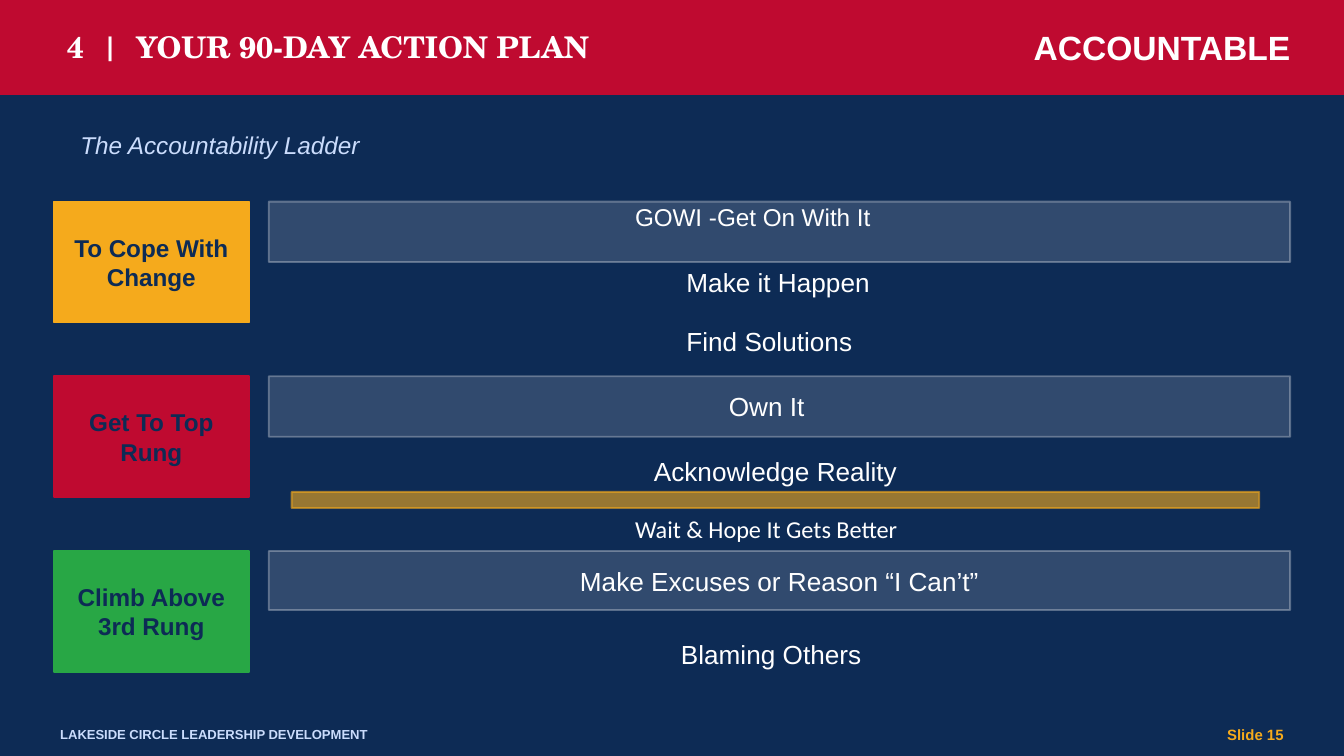
"""Build the accountability ladder slide."""
from lxml import etree
from pptx import Presentation
from pptx import util as u
from pptx.dml.color import RGBColor
from pptx.enum import shapes, text
from pptx.oxml import ns

NAVY = RGBColor(0x0D, 0x2B, 0x55)
RED = RGBColor(0xBF, 0x0A, 0x30)
GOLD = RGBColor(0xF5, 0xAA, 0x1C)
GREEN = RGBColor(0x28, 0xA7, 0x45)
PALE = RGBColor(0xCA, 0xDC, 0xFC)
WHITE = RGBColor(0xFF, 0xFF, 0xFF)
LEFT, MID, RIGHT = text.PP_ALIGN.LEFT, text.PP_ALIGN.CENTER, text.PP_ALIGN.RIGHT

deck = Presentation()
deck.slide_width = u.Inches(10)
deck.slide_height = deck.slide_width * 9 // 16
col = deck.slide_width / 10
row = deck.slide_height / 9 * 1.6
slide = deck.slides.add_slide(deck.slide_layouts[6])
slide.background.fill.solid()
slide.background.fill.fore_color.rgb = NAVY


def block(x, y, w, h, color, clear=100, edge=100):
    shape = slide.shapes.add_shape(
        shapes.MSO_SHAPE.RECTANGLE, int(x * col), int(y * row), int(w * col), int(h * row))
    shape.shadow.inherit = False
    shape.line.width = u.Pt(1)
    for fill, share in ((shape.fill, clear), (shape.line.fill, edge)):
        fill.solid()
        fill.fore_color.rgb = color
        if share < 100:
            tone = list(shape._element.spPr.iter(ns.qn("a:srgbClr")))[-1]
            etree.SubElement(tone, ns.qn("a:alpha"), val=str(share * 1000))
    return shape


def label(x, y, w, h, words, size, color=WHITE, align=MID, bold=False,
          italic=False, font="Arial", pad=0.05, grow=False, shape=None):
    if shape is None:
        shape = slide.shapes.add_textbox(int(x * col), int(y * row), int(w * col), int(h * row))
    frame = shape.text_frame
    frame.word_wrap = True
    frame.margin_top = frame.margin_bottom = u.Inches(pad)
    frame.vertical_anchor = text.MSO_ANCHOR.TOP if grow else text.MSO_ANCHOR.MIDDLE
    if grow:
        frame.auto_size = text.MSO_AUTO_SIZE.SHAPE_TO_FIT_TEXT
    para = frame.paragraphs[0]
    para.alignment = align
    run = para.add_run()
    run.text = words
    run.font.name, run.font.size = font, u.Pt(size)
    run.font.bold, run.font.italic = bold, italic
    run.font.color.rgb = color


block(0, 0, 10, 0.7, RED)
label(0.4, 0, 9, 0.7, "4  |  YOUR 90-DAY ACTION PLAN", 16, align=LEFT, bold=True,
      font="TeX Gyre Schola")
label(7.55, 0, 2.15, 0.7, "ACCOUNTABLE", 18, align=RIGHT, bold=True)
label(0.5, 0.85, 9, 0.45, "The Accountability Ladder", 13, PALE, LEFT, italic=True)

goals = (("To Cope With Change", GOLD, 0.45), ("Get To Top Rung", RED, 0.45),
         ("Climb Above 3rd Rung", GREEN, 0.44))
for step, (goal, color, tall) in enumerate(goals):
    y = 1.5 + 1.3 * step
    block(0.4, y, 1.45, 0.9, color)
    label(0.4, y, 1.45, 0.9, goal, 13, NAVY, bold=True)
    bar = block(2, y, 7.6, tall, WHITE, 15, 30)

label(2, 4.1, 7.6, 0.44, "Make Excuses or Reason “I Can’t”", 14, pad=0.1, shape=bar)
label(2, 1.45, 7.2, 0.33, "GOWI -Get On With It", 13)
label(2.03, 2.86, 7.35, 0.33, "Own It", 14)
label(2.05, 3.77, 7.3, 0.33, "Wait & Hope It Gets Better", 13, font="Calibri")

block(0, 5.3, 10, 0.33, NAVY)
label(0.35, 5.3, 6, 0.33, "LAKESIDE CIRCLE LEADERSHIP DEVELOPMENT", 7, PALE, LEFT, bold=True)
label(7.5, 5.3, 2.15, 0.33, "Slide 15", 8, GOLD, RIGHT, bold=True)

label(2, 1.81, 7.58, 0.58, "Make it Happen", 14, pad=0.1)
rungs = ((2, 2.32, 7.45, "Find Solutions"), (2.21, 3.29, 7.12, "Acknowledge Reality"),
         (2.09, 4.65, 7.35, "Blaming Others "))
for x, y, w, rung in rungs:
    label(x, y, w, 0.44, rung, 14, pad=0.1, grow=True)
block(2.17, 3.66, 7.2, 0.12, GOLD, 60, 60)

deck.save("out.pptx")
